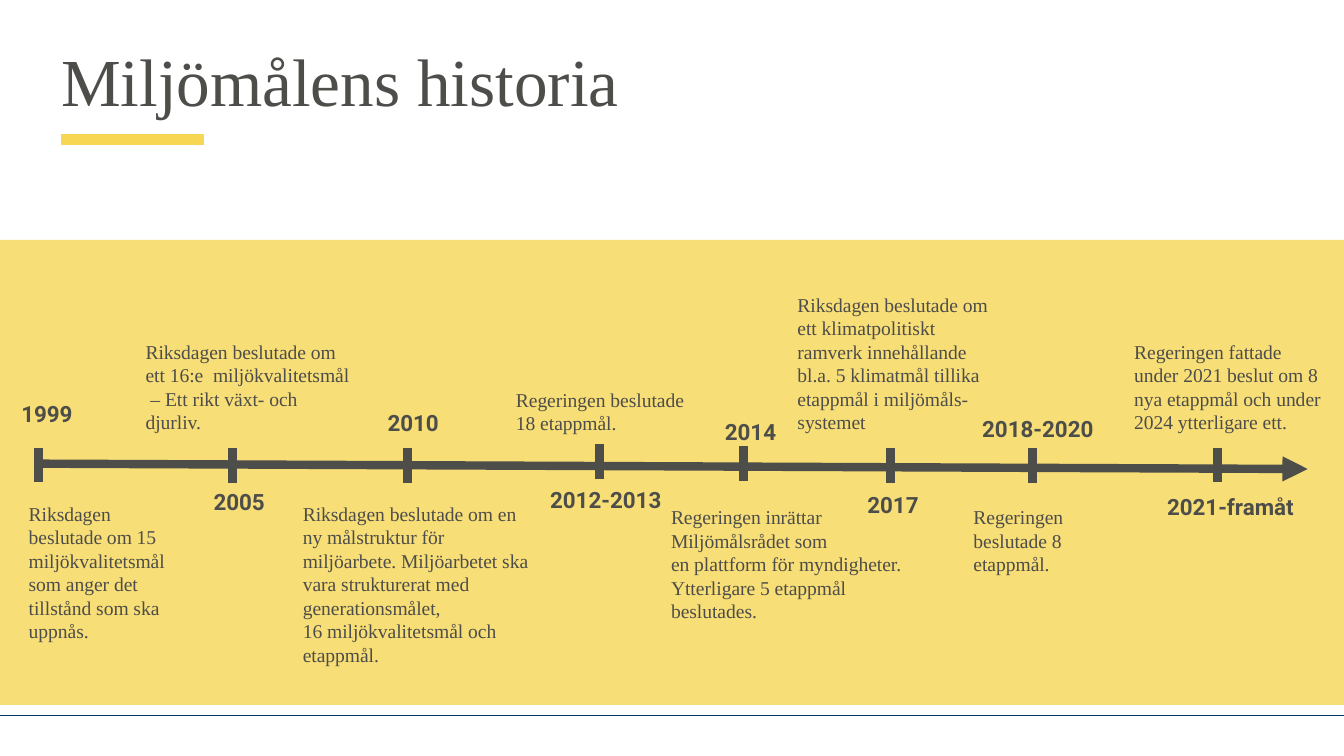
"""Build the timeline slide on the history of the Swedish environmental goals."""
from lxml.etree import SubElement
from pptx import Presentation
from pptx.dml.color import RGBColor
from pptx.enum.shapes import MSO_CONNECTOR, MSO_SHAPE
from pptx.enum.text import MSO_ANCHOR, MSO_AUTO_SIZE, PP_ALIGN
from pptx.oxml.ns import qn
from pptx.util import Pt

PX = 4572
GREY = RGBColor(0x4D, 0x4D, 0x4A)
YELLOW = RGBColor(0xF7, 0xD6, 0x54)
NAVY = RGBColor(0x00, 0x33, 0x66)

YEAR_FORMAT = {"name": "Roboto", "size": Pt(12), "bold": True}
NOTE_FORMAT = {"name": "Times New Roman", "size": Pt(10.5), "bold": False}
TITLE_FORMAT = {"name": "Times New Roman", "size": Pt(36), "bold": False}

presentation = Presentation()
presentation.slide_width = 2000 * PX
presentation.slide_height = 1125 * PX
slide = presentation.slides.add_slide(presentation.slide_layouts[5])


def add_line(start_x, start_y, end_x, end_y, color, width):
    ends = [value * PX for value in (start_x, start_y, end_x, end_y)]
    connector = slide.shapes.add_connector(MSO_CONNECTOR.STRAIGHT, *ends)
    connector.line.color.rgb = color
    connector.line.width = Pt(width)
    SubElement(connector._element.spPr, qn("a:effectLst"))
    return connector


def write_text(text_frame, lines, font_format):
    text_frame.text = "\n".join(lines)
    for paragraph in text_frame.paragraphs:
        paragraph.alignment = PP_ALIGN.LEFT
        paragraph.font.color.rgb = GREY
        for name, value in font_format.items():
            setattr(paragraph.font, name, value)


add_line(0, 1065, 2000, 1065, NAVY, 0.4)

band = slide.shapes.add_shape(MSO_SHAPE.RECTANGLE, 0, 357 * PX, 2000 * PX, 692 * PX)
band.shadow.inherit = False
band.line.fill.background()
band.fill.solid()
band.fill.fore_color.rgb = YELLOW
band_color = band._element.spPr.find(qn("a:solidFill")).find(qn("a:srgbClr"))
SubElement(band_color, qn("a:alpha"), val="80000")

title = slide.shapes.title
title.left, title.top, title.width, title.height = [
    value * PX for value in (71, 58, 1874, 160)
]
write_text(title.text_frame, ["Miljömålens historia"], TITLE_FORMAT)
title.text_frame.vertical_anchor = MSO_ANCHOR.TOP
title.text_frame.paragraphs[0].line_spacing = Pt(39.6)
add_line(91, 208, 304, 208, YELLOW, 6)

arrow = add_line(58, 690, 1946, 698, GREY, 4.5)
SubElement(arrow.line._get_or_add_ln(), qn("a:tailEnd"), type="triangle")

ticks = [
    (57, 666), (346, 667), (606, 667), (892, 661),
    (1106, 664), (1325, 667), (1536, 667), (1812, 666),
]
for x, top in ticks:
    add_line(x, top, x, top + 52, GREY, 5)

years = [
    ("1999", 12, 586, 118),
    ("2005", 298, 717, 118),
    ("2010", 557, 599, 118),
    ("2012-2013", 799, 713, 208),
    ("2014", 1059, 613, 118),
    ("2017", 1271, 721, 118),
    ("2018-2020", 1442, 608, 208),
    ("2021-framåt", 1717, 724, 232),
]
notes = [
    (["Riksdagen beslutade om 15 miljökvalitetsmål som anger det tillstånd som ska uppnås."],
     23, 737, 276, 232),
    (["Riksdagen beslutade om ett 16:e  miljökvalitetsmål", " – Ett rikt växt- och djurliv."],
     197, 496, 352, 162),
    (["Riksdagen beslutade om en ny målstruktur för miljöarbete. Miljöarbetet ska vara "
      "strukturerat med generationsmålet,", "16 miljökvalitetsmål och etappmål."],
     431, 737, 386, 268),
    (["Regeringen beslutade 18 etappmål."], 748, 567, 310, 90),
    (["Regeringen inrättar Miljömålsrådet som",
      "en plattform för myndigheter. Ytterligare 5 etappmål beslutades."],
     979, 742, 385, 196),
    (["Riksdagen beslutade om ett klimatpolitiskt ramverk innehållande bl.a. "
      "5 klimatmål tillika etappmål i miljömåls-systemet"], 1167, 426, 330, 232),
    (["Regeringen beslutade 8  etappmål."], 1429, 742, 288, 126),
    (["Regeringen fattade under 2021 beslut om 8 nya etappmål och under 2024 ytterligare ett."],
     1668, 496, 330, 162),
]
labels = [([year], x, y, width, 60, YEAR_FORMAT, False) for year, x, y, width in years]
labels += [(*note, NOTE_FORMAT, True) for note in notes]
for lines, x, y, width, height, font_format, wrap in labels:
    box = slide.shapes.add_textbox(x * PX, y * PX, width * PX, height * PX)
    box.text_frame.word_wrap = wrap
    box.text_frame.auto_size = MSO_AUTO_SIZE.SHAPE_TO_FIT_TEXT
    write_text(box.text_frame, lines, font_format)

presentation.save("out.pptx")
